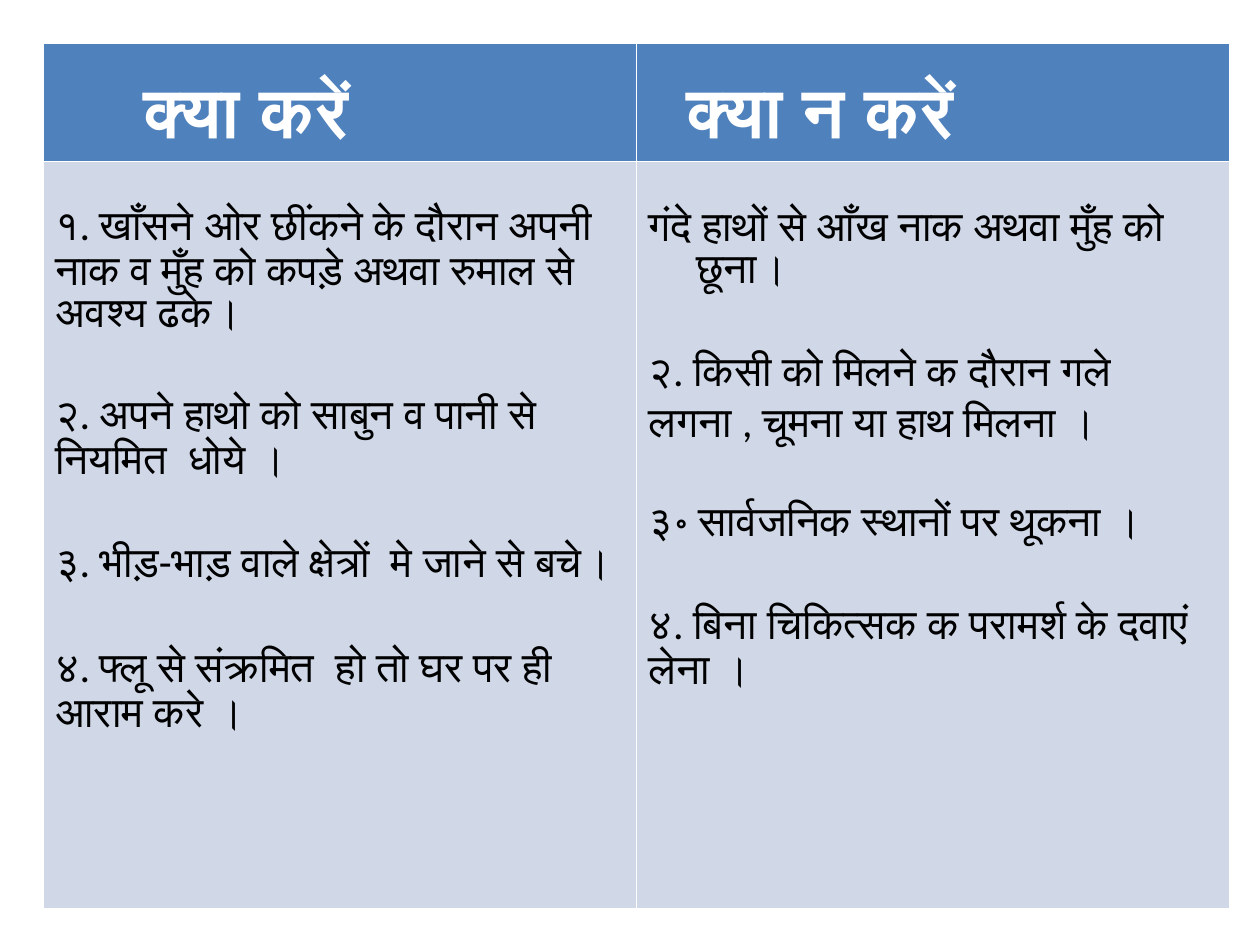
from pptx import Presentation
from pptx.dml.color import RGBColor
from pptx.util import Inches, Pt

HEADER_BLUE = RGBColor(0x4F, 0x81, 0xBD)
BODY_BLUE = RGBColor(0xD0, 0xD8, 0xE8)
WHITE = RGBColor(0xFF, 0xFF, 0xFF)
BLACK = RGBColor(0, 0, 0)
FONT = "Calibri"

COLUMNS = [
    {
        "heading": "क्या करें",
        "heading_inset": 0.8,
        "advice_top": 0.31,
        "advice": [
            "१. खाँसने ओर छींकने के दौरान अपनी नाक व मुँह को कपड़े अथवा रुमाल से अवश्य ढके।",
            "२. अपने हाथो को साबुन व पानी से नियमित  धोये ।",
            "३. भीड़-भाड़ वाले क्षेत्रों  मे जाने से बचे।",
            "४. फ्लू से संक्रमित  हो तो घर पर ही आराम करे ।",
        ],
        "hanging": [],
    },
    {
        "heading": "क्या न करें",
        "heading_inset": 0.4,
        "advice_top": 0.37,
        "advice": [
            "गंदे हाथों से आँख नाक अथवा मुँह को छूना।",
            "२. किसी को मिलने क दौरान गले लगना , चूमना या हाथ मिलना ।",
            "३॰ सार्वजनिक स्थानों पर थूकना ।",
            "४. बिना चिकित्सक क परामर्श के दवाएं लेना ।",
        ],
        "hanging": [0],
    },
]
TABLE_LEFT = TABLE_TOP = 0.34
COLUMN_WIDTH = 4.71
ROW_HEIGHTS = (0.94, 5.93)
HEADING_TOP = 0.31
ADVICE_GAP = Pt(31)
HANGING_INDENT = Inches(0.38)


def fill_cell(cell, lines, fill, color, size, bold, top):
    cell.fill.solid()
    cell.fill.fore_color.rgb = fill
    cell.margin_top = Inches(top)
    cell.text_frame.text = "\n".join(lines)
    for position, paragraph in enumerate(cell.text_frame.paragraphs):
        if position:
            paragraph.space_before = ADVICE_GAP
        font = paragraph.font
        font.name, font.size, font.bold = FONT, Pt(size), bold
        font.color.rgb = color


def hang(paragraph):
    """Indent every line of the paragraph after its first."""
    properties = paragraph._p.get_or_add_pPr()
    properties.set("marL", str(HANGING_INDENT))
    properties.set("indent", str(-HANGING_INDENT))


def main():
    prs = Presentation()
    prs.slide_width, prs.slide_height = Inches(10), Inches(7.5)
    slide = prs.slides.add_slide(prs.slide_layouts[6])

    table = slide.shapes.add_table(
        len(ROW_HEIGHTS), len(COLUMNS),
        Inches(TABLE_LEFT), Inches(TABLE_TOP),
        Inches(COLUMN_WIDTH * len(COLUMNS)), Inches(sum(ROW_HEIGHTS)),
    ).table
    for row, height in zip(table.rows, ROW_HEIGHTS):
        row.height = Inches(height)

    for index, column in enumerate(COLUMNS):
        table.columns[index].width = Inches(COLUMN_WIDTH)
        heading, advice = table.cell(0, index), table.cell(1, index)
        fill_cell(heading, [column["heading"]], HEADER_BLUE, WHITE, 40, True, HEADING_TOP)
        heading.margin_left = Inches(column["heading_inset"])
        fill_cell(advice, column["advice"], BODY_BLUE, BLACK, 24, False, column["advice_top"])
        for position in column["hanging"]:
            hang(advice.text_frame.paragraphs[position])

    prs.save("out.pptx")


if __name__ == "__main__":
    main()
